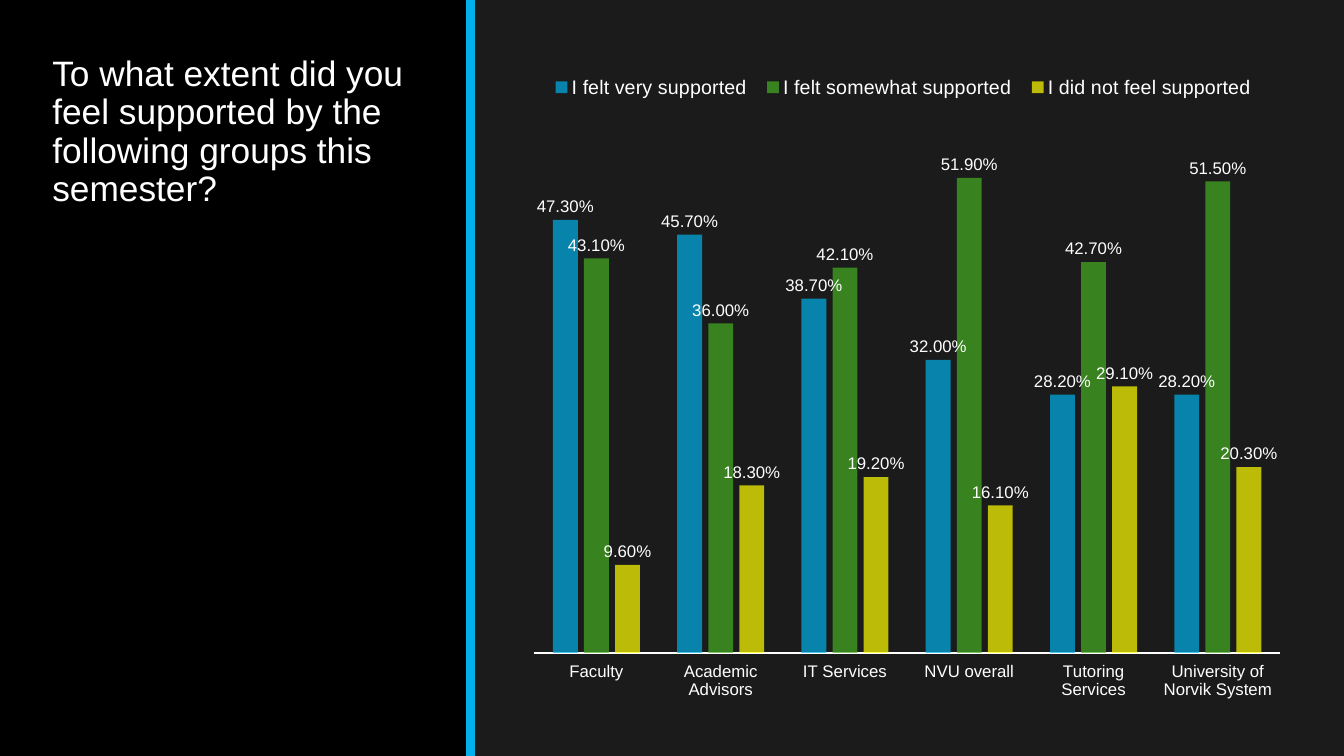
from lxml.etree import SubElement
from pptx import Presentation
from pptx.chart.data import CategoryChartData
from pptx.dml.color import RGBColor
from pptx.enum.chart import XL_CHART_TYPE as ChartType
from pptx.enum.chart import XL_LABEL_POSITION as LabelPos
from pptx.enum.chart import XL_LEGEND_POSITION as LegendPos
from pptx.enum.chart import XL_TICK_LABEL_POSITION as TickLabel
from pptx.enum.chart import XL_TICK_MARK as TickMark
from pptx.enum.shapes import MSO_CONNECTOR as Connector
from pptx.enum.shapes import MSO_SHAPE as Shape
from pptx.oxml import parse_xml
from pptx.oxml.ns import nsdecls, qn
from pptx.util import Inches, Pt

W, H = 13.33, 7.5
FONT, WHITE, CYAN = "Arial", "FFFFFF", "00B0EA"
PANEL = 0.35  # share of the width taken by the title panel
TITLE = "To what extent did you feel supported by the following groups this semester?"
GROUPS = ["Faculty", "Academic Advisors", "IT Services", "NVU overall",
          "Tutoring Services", "University of Norvik System"]
ANSWERS = [
    ("I felt very supported", CYAN, [0.473, 0.457, 0.387, 0.32, 0.282, 0.282]),
    ("I felt somewhat supported", "45AE22", [0.431, 0.36, 0.421, 0.519, 0.427, 0.515]),
    ("I did not feel supported", "FFFF00", [0.096, 0.183, 0.192, 0.161, 0.291, 0.203]),
]


def color(hex_text):
    return RGBColor.from_string(hex_text)


def style(font, size, hex_text=WHITE):
    font.name, font.size = FONT, Pt(size)
    font.color.rgb = color(hex_text)


def add_text(s, text, box, size=12, spacing=1.0):
    tf = s.shapes.add_textbox(*box).text_frame
    tf.word_wrap = True
    p = tf.paragraphs[0]
    p.line_spacing = spacing
    r = p.add_run()
    r.text = text
    style(r.font, size)


def set_layout(parent, index, x, y, w, h, inner=False):
    """Place a chart part by shares of the chart's size."""
    for old in parent.findall(qn("c:layout")):
        parent.remove(old)
    layout = parse_xml(f"<c:layout {nsdecls('c')}><c:manualLayout/></c:layout>")
    values = [("xMode", "edge"), ("yMode", "edge"),
              ("x", x), ("y", y), ("w", w), ("h", h)]
    if inner:
        values.insert(0, ("layoutTarget", "inner"))
    for tag, value in values:
        SubElement(layout[0], qn(f"c:{tag}")).set("val", str(value))
    parent.insert(index, layout)


def title_panel(s, x, y, w, h):
    # Black panel
    panel = s.shapes.add_shape(Shape.RECTANGLE, x, y, w, h)
    panel.shadow.inherit = False
    panel.fill.solid()
    panel.fill.fore_color.rgb = color("000000")
    panel.line.fill.background()

    # Divider on its right edge
    divider = s.shapes.add_connector(Connector.STRAIGHT, x + w, y, x + w, y + h)
    divider.line.color.rgb = color(CYAN)
    divider.line.width = Pt(6)
    SubElement(divider._element.spPr, qn("a:effectLst"))

    # Question
    box = [int(n) for n in (x + 0.09 * w, y + 0.068 * h, 0.82 * w, 0.233 * h)]
    add_text(s, TITLE, box, size=25.2, spacing=0.9)


def support_chart(s, x, y, w, h):
    data = CategoryChartData(number_format="0.00%")
    data.categories = GROUPS
    for name, _, values in ANSWERS:
        data.add_series(name, values)
    chart = s.shapes.add_chart(ChartType.COLUMN_CLUSTERED, x, y, w, h, data).chart
    chart.has_title = False
    style(chart.font, 10)

    # Axes
    cat, val = chart.category_axis, chart.value_axis
    cat.major_tick_mark = cat.minor_tick_mark = TickMark.NONE
    cat.tick_label_position = TickLabel.LOW
    style(cat.tick_labels.font, 12)
    cat.format.line.color.rgb = color(WHITE)
    cat.format.line.width = Pt(1.25)
    val.visible = val.has_major_gridlines = False
    val.minimum_scale, val.maximum_scale = 0, 0.6
    val.tick_labels.number_format = "0.00%"
    val.tick_labels.number_format_is_linked = False

    # Columns and their labels
    plot = chart.plots[0]
    plot.vary_by_categories = False
    plot.gap_width, plot.overlap = 150, -25
    for series, (_, hex_text, _) in zip(plot.series, ANSWERS):
        series.format.fill.solid()
        series.format.fill.fore_color.rgb = color(hex_text)
        fill = series._element.find(f"{qn('c:spPr')}/{qn('a:solidFill')}")
        SubElement(fill[0], qn("a:alpha")).set("val", "70000")
        labels = series.data_labels
        labels.show_value = True
        labels.number_format = "0.00%"
        labels.number_format_is_linked = False
        labels.position = LabelPos.OUTSIDE_END
        style(labels.font, 12)

    # Legend above the plot
    chart.has_legend = True
    chart.legend.position = LegendPos.TOP
    chart.legend.include_in_layout = False
    style(chart.legend.font, 14)
    set_layout(next(chart.element.iter(qn("c:legend"))), 1, 0.03, 0.03, 0.93, 0.05)
    set_layout(next(chart.element.iter(qn("c:plotArea"))), 0,
               0.02, 0.08, 0.96, 0.84, inner=True)


def main():
    prs = Presentation()
    prs.slide_width, prs.slide_height = Inches(W), Inches(H)
    s = prs.slides.add_slide(prs.slide_layouts[6])
    s.background.fill.solid()
    s.background.fill.fore_color.rgb = color("1B1B1B")
    title_panel(s, 0, 0, Inches(PANEL * W), Inches(H))
    support_chart(s, Inches(0.386 * W), Inches(0.068 * H),
                  Inches(0.578 * W), Inches(0.865 * H))
    prs.save("out.pptx")


if __name__ == "__main__":
    main()
